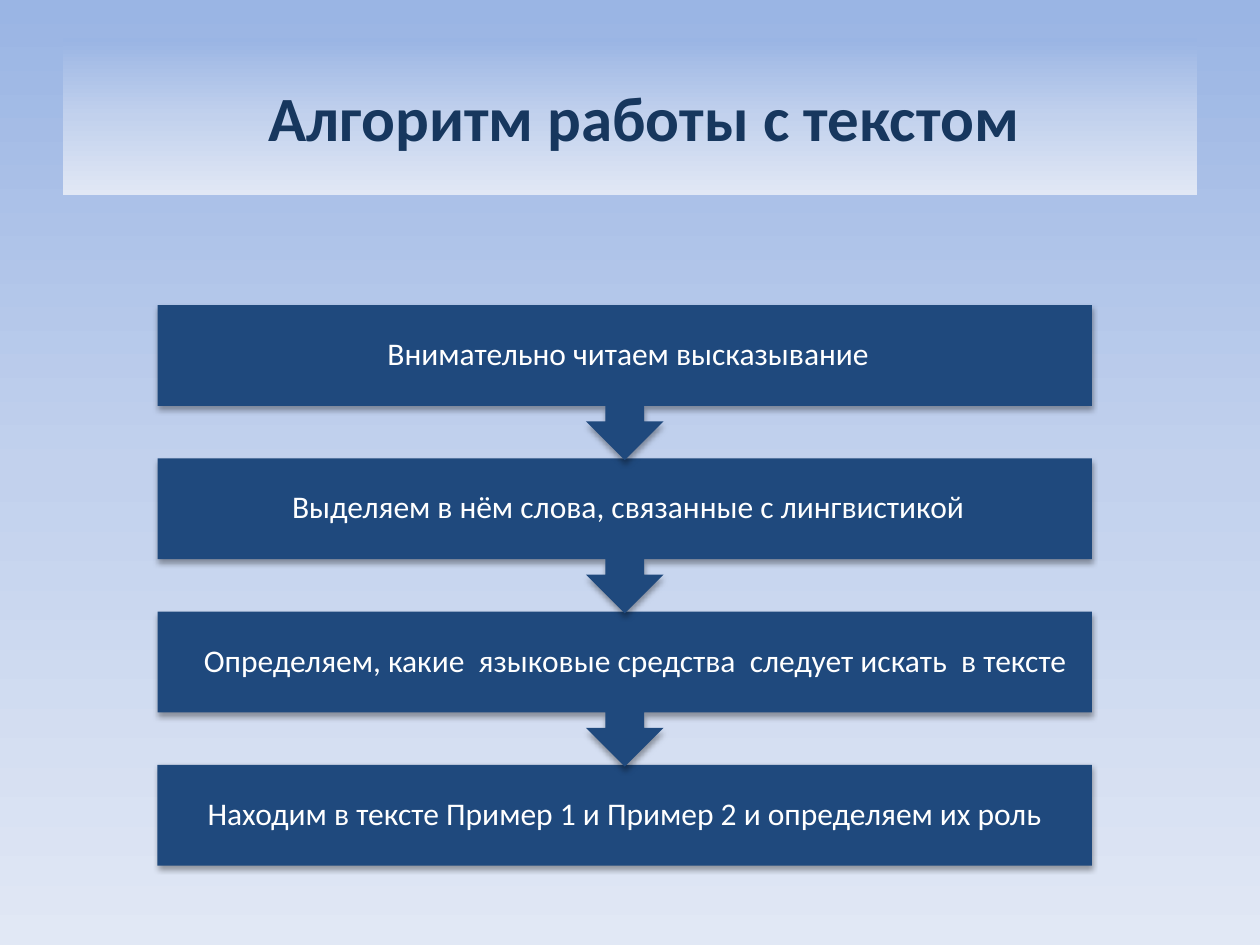
"""Build the slide with the four-step text analysis algorithm."""
from dataclasses import dataclass

from lxml import etree
from pptx import Presentation
from pptx import util as u
from pptx.dml.color import RGBColor
from pptx.enum import shapes, text
from pptx.oxml import parse_xml
from pptx.oxml.ns import nsdecls, qn

COLORS = {
    "step": "1F497D",
    "step_text": "FFFFFF",
    "title": "17375E",
    "shadow": "000000",
}
GRADIENT = {0: "9AB5E4", 50: "C2D1ED", 100: "E1E8F5"}
STEP_LEFT, STEP_TOP, STEP_WIDTH = 90, 174.3, 534
BODY_HEIGHT, CALLOUT_HEIGHT, PITCH = 57.6, 88.6, 87.6
STEP_INSET = 10


@dataclass
class Step:
    caption: str
    indent: float


STEPS = [
    Step("Внимательно читаем высказывание", 4),
    Step("Выделяем в нём слова, связанные с лингвистикой", 4),
    Step("Определяем, какие  языковые средства  следует искать  в тексте", 12),
    Step("Находим в тексте Пример 1 и Пример 2 и определяем их роль", 0),
]


def fill_gradient(fill, owner) -> None:
    """Give a fill the vertical three-stop gradient."""
    fill.gradient()
    fill.gradient_angle = 270
    stops = next(owner.iter(qn("a:gsLst")))
    for stop in list(stops):
        stops.remove(stop)
    for position, color in GRADIENT.items():
        stop = etree.SubElement(stops, qn("a:gs"), pos=str(position * 1000))
        etree.SubElement(stop, qn("a:srgbClr"), val=color)


def write_text(box, caption: str, inset: float, indent: float,
               font: dict, color: str, spacing: float = 1.0) -> None:
    """Write one centred paragraph, shifted by a left indent."""
    frame = box.text_frame
    layout = {
        "word_wrap": True,
        "vertical_anchor": text.MSO_ANCHOR.MIDDLE,
        "margin_left": u.Pt(inset + indent),
        "margin_right": u.Pt(inset),
        "margin_top": u.Pt(inset),
        "margin_bottom": u.Pt(inset),
    }
    for name, value in layout.items():
        setattr(frame, name, value)
    para = frame.paragraphs[0]
    para.alignment = text.PP_ALIGN.CENTER
    para.line_spacing = spacing
    span = para.add_run()
    span.text = caption
    for name, value in {"name": "Calibri", **font}.items():
        setattr(span.font, name, value)
    span.font.color.rgb = RGBColor.from_string(COLORS[color])


def add_shadow(shape) -> None:
    """Replace the theme shadow with a soft downward one."""
    shape.shadow.inherit = False
    properties = shape._element.spPr
    properties.remove(properties.find(qn("a:effectLst")))
    properties.append(parse_xml(
        f'<a:effectLst {nsdecls("a")}><a:outerShdw blurRad="{u.Pt(3.1)}" '
        f'dist="{u.Pt(1.8)}" dir="5400000" rotWithShape="0">'
        f'<a:srgbClr val="{COLORS["shadow"]}"><a:alpha val="35000"/></a:srgbClr>'
        '</a:outerShdw></a:effectLst>'))


def add_step(page, index: int, step: Step) -> None:
    """Draw one step, with an arrow to the next unless it is the last."""
    top = STEP_TOP + index * PITCH
    last = index == len(STEPS) - 1
    kind = shapes.MSO_SHAPE.RECTANGLE if last else shapes.MSO_SHAPE.UP_ARROW_CALLOUT
    shape = page.shapes.add_shape(
        kind, u.Pt(STEP_LEFT), u.Pt(top), u.Pt(STEP_WIDTH),
        u.Pt(BODY_HEIGHT if last else CALLOUT_HEIGHT))
    shape.rotation = 0 if last else 180
    shape.fill.solid()
    shape.fill.fore_color.rgb = RGBColor.from_string(COLORS["step"])
    shape.line.fill.background()
    add_shadow(shape)
    box = page.shapes.add_textbox(
        u.Pt(STEP_LEFT), u.Pt(top), u.Pt(STEP_WIDTH), u.Pt(BODY_HEIGHT))
    write_text(box, step.caption, STEP_INSET, step.indent,
               {"size": u.Pt(18)}, "step_text", 0.9)


def main() -> None:
    """Build and save the deck."""
    deck = Presentation()
    deck.slide_width, deck.slide_height = u.Pt(720), u.Pt(540)
    page = deck.slides.add_slide(deck.slide_layouts[6])
    fill_gradient(page.background.fill, page._element)
    title = page.shapes.add_textbox(u.Pt(36), u.Pt(21.6), u.Pt(648), u.Pt(90))
    fill_gradient(title.fill, title._element)
    write_text(title, "Алгоритм работы с текстом", 5, 16,
               {"size": u.Pt(36), "bold": True}, "title")
    for index, step in reversed(list(enumerate(STEPS))):
        add_step(page, index, step)
    deck.save("out.pptx")


if __name__ == "__main__":
    main()
